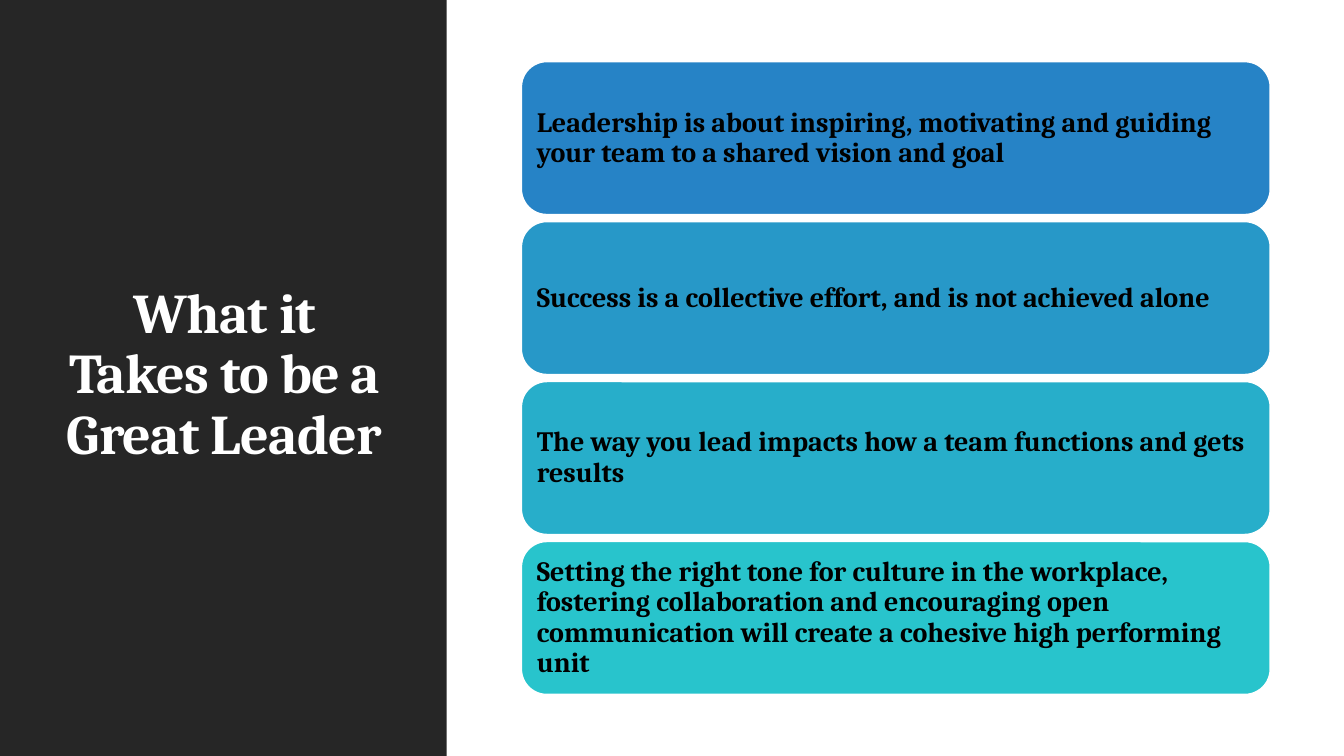
import pptx
import pptx.util
import pptx.dml.color
import pptx.enum.shapes
import pptx.enum.text

Inch = pptx.util.Inches
RGB = pptx.dml.color.RGBColor
Kind = pptx.enum.shapes.MSO_SHAPE
Align = pptx.enum.text.PP_ALIGN

DARK = RGB(0x26, 0x26, 0x26)
WHITE = RGB(0xFF, 0xFF, 0xFF)
BLACK = RGB(0x00, 0x00, 0x00)
BLUE = RGB(0x26, 0x83, 0xC6)
SKY = RGB(0x27, 0x98, 0xC8)
AQUA = RGB(0x27, 0xAE, 0xCA)
TEAL = RGB(0x28, 0xC4, 0xCC)

# Grid of the card column, in inches
LEFT, TOP, WIDE, HIGH, STEP = 5.17, 0.61, 7.43, 1.52, 1.587

CARDS = [
    (BLUE, "Leadership is about inspiring, motivating and guiding your team to a shared vision and goal"),
    (SKY, "Success is a collective effort, and is not achieved alone"),
    (AQUA, "The way you lead impacts how a team functions and gets results"),
    (TEAL, "Setting the right tone for culture in the workplace, fostering collaboration "
           "and encouraging open communication will create a cohesive high performing unit"),
]


def add_block(kind, box, fill):
    block = slide.shapes.add_shape(kind, *[Inch(size) for size in box])
    block.shadow.inherit = False
    block.fill.solid()
    block.fill.fore_color.rgb = fill
    return block


def add_words(frame, words, size, color, align):
    frame.word_wrap = True
    frame.vertical_anchor = pptx.enum.text.MSO_ANCHOR.MIDDLE
    para = frame.paragraphs[0]
    para.alignment = align
    para.line_spacing = 0.9
    run = para.add_run()
    run.text = words
    run.font.name = "Cambria"
    run.font.size = pptx.util.Pt(size)
    run.font.bold = True
    run.font.color.rgb = color
    return run


deck = pptx.Presentation()
deck.slide_width = Inch(13.33)
deck.slide_height = Inch(7.5)
slide = deck.slides.add_slide(deck.slide_layouts[6])

# Dark side panel
panel = add_block(Kind.RECTANGLE, (0, 0, 4.43, 7.5), DARK)
panel.line.fill.background()

# Title on the panel
title = slide.shapes.add_textbox(Inch(0.54), Inch(0.57), Inch(3.37), Inch(6.31))
run = add_words(title.text_frame, "What it Takes to be a Great Leader", 40, WHITE, Align.CENTER)
run.font._element.set("spc", "-50")

# Column of message cards
for row, (fill, words) in enumerate(CARDS):
    card = add_block(Kind.ROUNDED_RECTANGLE, (LEFT, TOP + row * STEP, WIDE, HIGH), fill)
    card.line.color.rgb = WHITE
    card.line.width = pptx.util.Pt(1.25)
    frame = card.text_frame
    frame.margin_left = frame.margin_right = Inch(0.08)
    frame.margin_top = frame.margin_bottom = Inch(0.08)
    add_words(frame, words, 20, BLACK, Align.LEFT)

deck.save("out.pptx")
